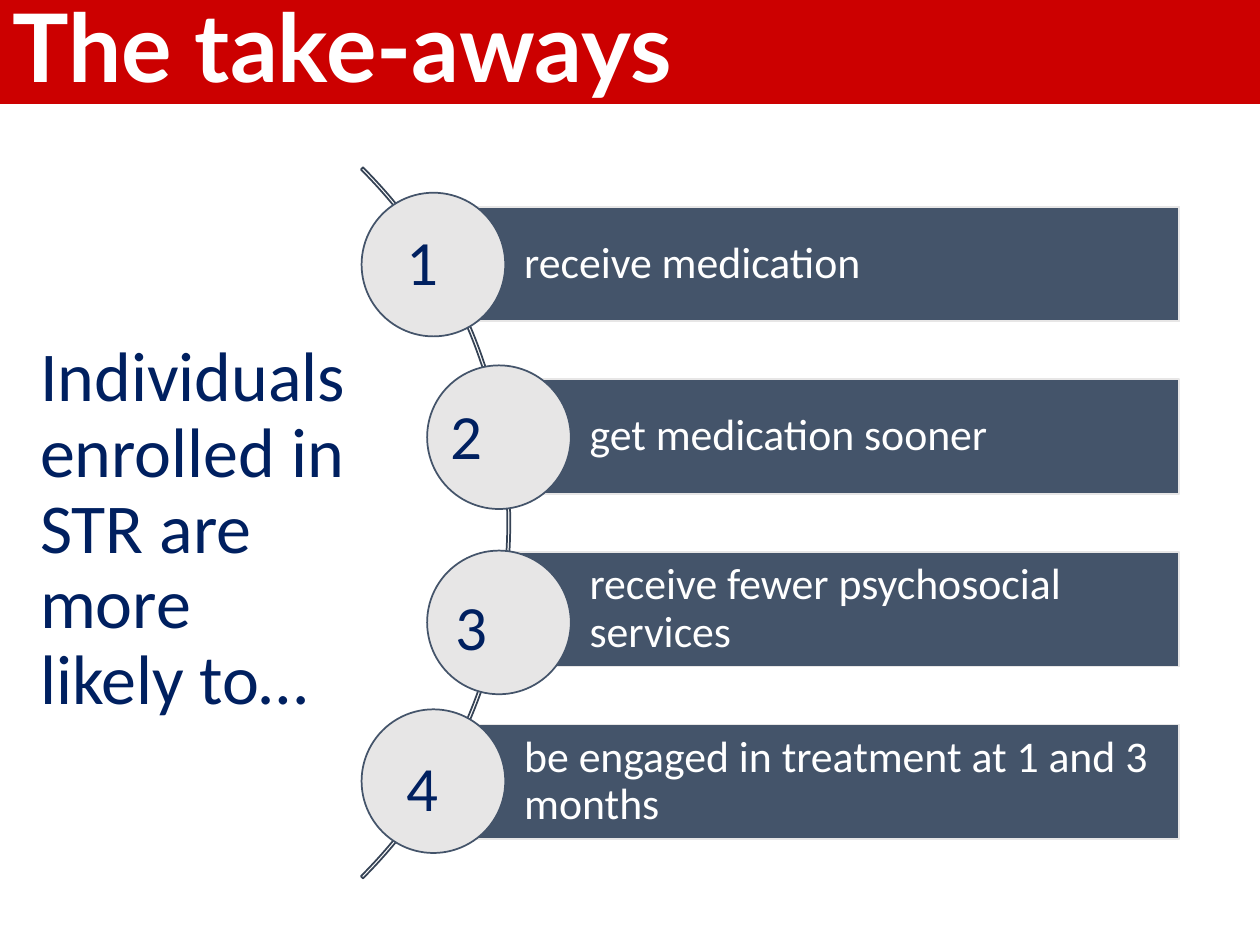
from pptx import Presentation
from pptx.dml.color import RGBColor
from pptx.enum.shapes import MSO_SHAPE as Shape
from pptx.enum.text import MSO_ANCHOR as Anchor, PP_ALIGN as Align
from pptx.util import Inches, Pt

COLORS = {
    "red": "CC0000",
    "white": "FFFFFF",
    "navy": "002060",
    "slate": "44546A",
    "gray": "E7E6E6",
    "arc": "364355",
}

presentation = Presentation()
presentation.slide_width = Inches(10)
presentation.slide_height = Inches(7.5)
slide = presentation.slides.add_slide(presentation.slide_layouts[6])


def add_box(kind, left, top, width, height, fill, line):
    """Add a preset shape with a 1 pt outline; fill None leaves it hollow."""
    shape = slide.shapes.add_shape(
        kind, Inches(left), Inches(top), Inches(width), Inches(height))
    shape.shadow.inherit = False
    if fill:
        shape.fill.solid()
        shape.fill.fore_color.rgb = RGBColor.from_string(COLORS[fill])
    else:
        shape.fill.background()
    shape.line.color.rgb = RGBColor.from_string(COLORS[line])
    shape.line.width = Pt(1)
    return shape


def write(shape, text, size, color, font="Calibri", spacing=0.9, wrap=True):
    """Put one left-aligned paragraph in a shape and return it."""
    shape.text_frame.text = text
    shape.text_frame.word_wrap = wrap
    paragraph = shape.text_frame.paragraphs[0]
    paragraph.alignment = Align.LEFT
    paragraph.line_spacing = spacing
    run_font = paragraph.runs[0].font
    run_font.name = font
    run_font.size = Pt(size)
    run_font.color.rgb = RGBColor.from_string(COLORS[color])
    return paragraph


# Lead-in and title
lead_in = slide.shapes.add_textbox(
    Inches(0.22), Inches(2.66), Inches(2.66), Inches(0.81))
paragraph = write(
    lead_in, "Individuals enrolled in STR are more likely to…", 40, "navy")
paragraph.space_before = Pt(10)

title = add_box(Shape.RECTANGLE, 0, 0, 10, 0.82, "red", "red")
title.text_frame.vertical_anchor = Anchor.MIDDLE
paragraph = write(title, "The take-aways", 54, "white", font="Lato")
paragraph.runs[0].font.bold = True

# Arc behind the takeaways: start angle, end angle, thickness
arc = add_box(Shape.BLOCK_ARC, -3.93, 0.16, 7.98, 7.98, None, "arc")
for index, value in enumerate((189, 27, 0.003)):
    arc.adjustments[index] = value

# Bars share a right edge and a pitch; each circle is centred on its bar's left end
BAR_RIGHT, BAR_TOP, BAR_PITCH, BAR_HEIGHT = 9.36, 1.64, 1.37, 0.91
DIAMETER = 1.14
takeaways = [  # text, bar left, circle top
    ("receive medication", 3.44, 1.53),
    ("get medication sooner", 3.96, 2.9),
    ("receive fewer psychosocial services", 3.96, 4.37),
    ("be engaged in treatment at 1 and 3 months", 3.44, 5.63),
]
for index, (text, left, circle_top) in enumerate(takeaways):
    bar = add_box(Shape.RECTANGLE, left, BAR_TOP + index * BAR_PITCH,
                  BAR_RIGHT - left, BAR_HEIGHT, "slate", "gray")
    frame = bar.text_frame
    frame.vertical_anchor = Anchor.MIDDLE
    frame.margin_left = Inches(0.72)
    frame.margin_top = frame.margin_right = frame.margin_bottom = Inches(0.07)
    write(bar, text, 25, "white")
    add_box(Shape.OVAL, left - DIAMETER / 2, circle_top,
            DIAMETER, DIAMETER, "gray", "slate")

# Numbers over the circles
number_places = [(3.13, 1.72), (3.48, 3.1), (3.52, 4.61), (3.13, 5.89)]
for number, (left, top) in enumerate(number_places, start=1):
    label = slide.shapes.add_textbox(
        Inches(left), Inches(top), Inches(0.46), Inches(0.71))
    write(label, str(number), 36, "navy", spacing=1.0, wrap=False)

presentation.save("out.pptx")
